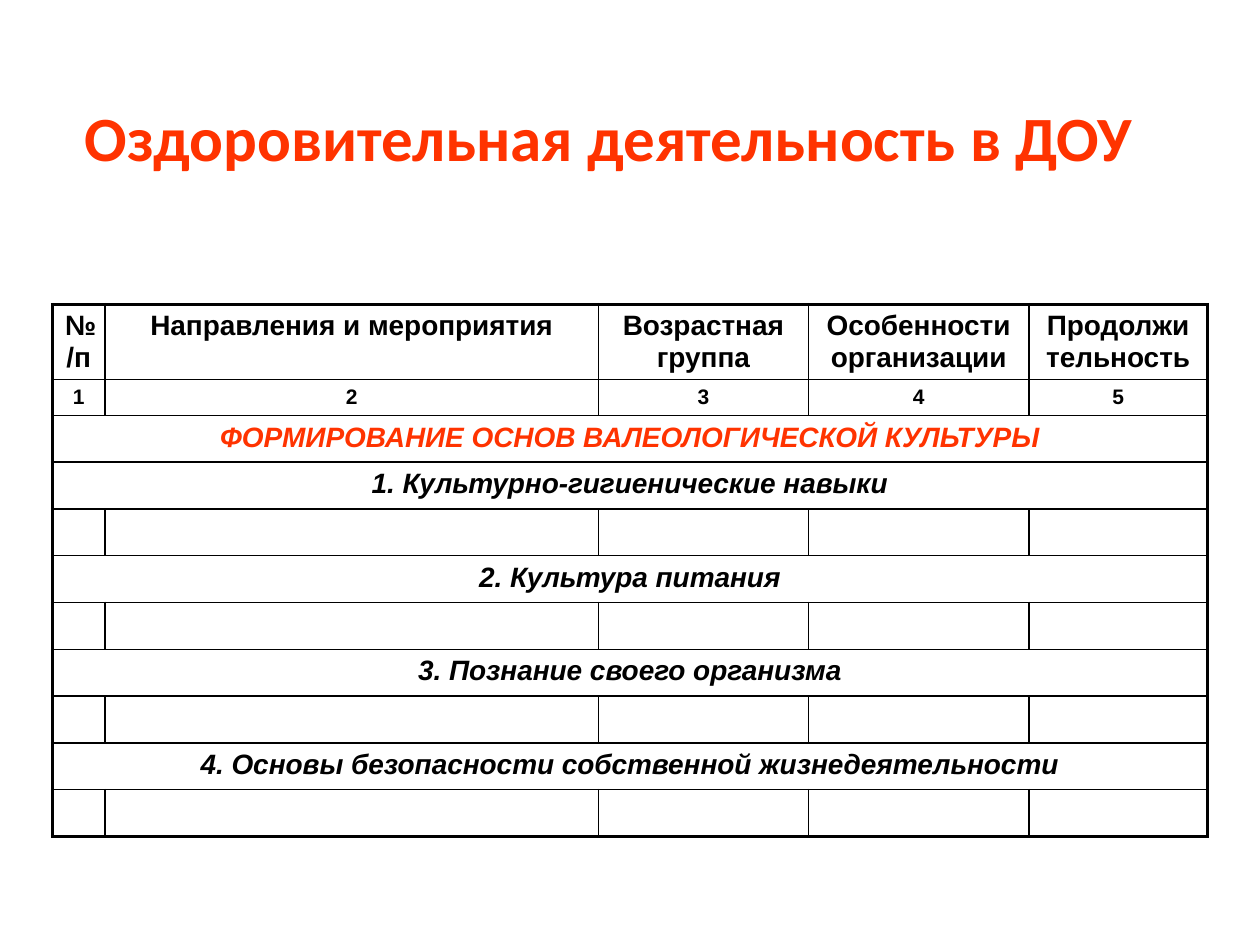
from dataclasses import dataclass
from lxml.etree import SubElement
from pptx import Presentation
from pptx.dml.color import RGBColor
from pptx.enum.text import MSO_ANCHOR, PP_ALIGN as Align
from pptx.oxml.ns import qn
from pptx.slide import Slide
from pptx.util import Pt

HEADERS = [
    "№/п",
    "Направления и мероприятия",
    "Возрастная группа",
    "Особенности организации",
    "Продолжительность",
]
SECTION = "ФОРМИРОВАНИЕ ОСНОВ ВАЛЕОЛОГИЧЕСКОЙ КУЛЬТУРЫ"
TOPICS = [
    "1. Культурно-гигиенические навыки",
    "2. Культура питания",
    "3. Познание своего организма",
    "4. Основы безопасности собственной жизнедеятельности",
]
COLUMN_WIDTHS = [30, 282, 120, 126, 102]
ROW_HEIGHT = 26.7
NUMBER_ROW_HEIGHT = 18.7


def color(value):
    return RGBColor.from_string(value)


@dataclass
class SlideBuilder:
    page: Slide
    accent: str = "FF3300"
    ink: str = "000000"
    title_font: str = "Calibri"
    table_font: str = "Arial"
    thin: float = 1
    thick: float = 2.25

    def format_text(self, para, font, size, shade, italic=False):
        para.alignment = Align.CENTER
        for span in para.runs:
            span.font.name = font
            span.font.size = Pt(size)
            span.font.bold = True
            span.font.italic = italic
            span.font.color.rgb = color(shade)

    def title(self, text, left, top, width, height):
        box = self.page.shapes.title
        box.left, box.top, box.width, box.height = map(Pt, (left, top, width, height))
        box.text_frame.text = text
        box.text_frame.vertical_anchor = MSO_ANCHOR.MIDDLE
        self.format_text(box.text_frame.paragraphs[0], self.title_font, 36, self.accent)

    def table(self, row_count, left, top):
        width = sum(COLUMN_WIDTHS)
        height = ROW_HEIGHT * row_count
        shape = self.page.shapes.add_table(
            row_count, len(COLUMN_WIDTHS), Pt(left), Pt(top), Pt(width), Pt(height)
        )
        table = shape.table
        table.first_row = table.horz_banding = False
        for column, column_width in zip(table.columns, COLUMN_WIDTHS):
            column.width = Pt(column_width)
        for row in table.rows:
            row.height = Pt(ROW_HEIGHT)
        return table

    def cell(self, cell, text, size=16, shade=None, italic=False):
        para = cell.text_frame.paragraphs[0]
        if text:
            para.text = text
            self.format_text(para, self.table_font, size, shade or self.ink, italic)
        else:
            SubElement(para._p, qn("a:endParaRPr"), sz=str(size * 100))

    def row(self, table, index, texts, size=16):
        for cell, text in zip(table.rows[index].cells, texts):
            self.cell(cell, text, size)

    def banner(self, table, index, text, shade=None):
        cells = list(table.rows[index].cells)
        cells[0].merge(cells[-1])
        self.cell(cells[0], text, shade=shade, italic=True)

    def border(self, cell, side, width):
        line = SubElement(cell._tc.get_or_add_tcPr(), qn(f"a:ln{side}"), w=str(Pt(width)))
        if width:
            fill = SubElement(line, qn("a:solidFill"))
            SubElement(fill, qn("a:srgbClr"), val=self.ink)
        else:
            SubElement(line, qn("a:noFill"))

    def borders(self, table):
        last_row, last_column = len(table.rows) - 1, len(table.columns) - 1
        for r, row in enumerate(table.rows):
            for c, cell in enumerate(row.cells):
                inner = 0 if cell.is_spanned else self.thin
                right_edge = c == last_column or cell.is_merge_origin
                self.border(cell, "L", self.thick if c == 0 else inner)
                self.border(cell, "R", self.thick if right_edge else inner)
                self.border(cell, "T", self.thick if r == 0 else self.thin)
                self.border(cell, "B", self.thick if r == last_row else self.thin)
                cell.fill.background()


def main():
    deck = Presentation()
    deck.slide_width, deck.slide_height = Pt(720), Pt(540)
    builder = SlideBuilder(deck.slides.add_slide(deck.slide_layouts[5]))
    builder.title("Оздоровительная деятельность в ДОУ", 12, 12, 672, 132)

    table = builder.table(3 + 2 * len(TOPICS), 30, 174)
    table.rows[1].height = Pt(NUMBER_ROW_HEIGHT)
    builder.row(table, 0, HEADERS)
    builder.row(table, 1, [str(n) for n in range(1, len(HEADERS) + 1)], size=12)
    builder.banner(table, 2, SECTION, builder.accent)
    for number, topic in enumerate(TOPICS):
        index = 3 + 2 * number
        builder.banner(table, index, topic)
        builder.row(table, index + 1, [""] * len(HEADERS))
    builder.borders(table)

    deck.save("out.pptx")


if __name__ == "__main__":
    main()
